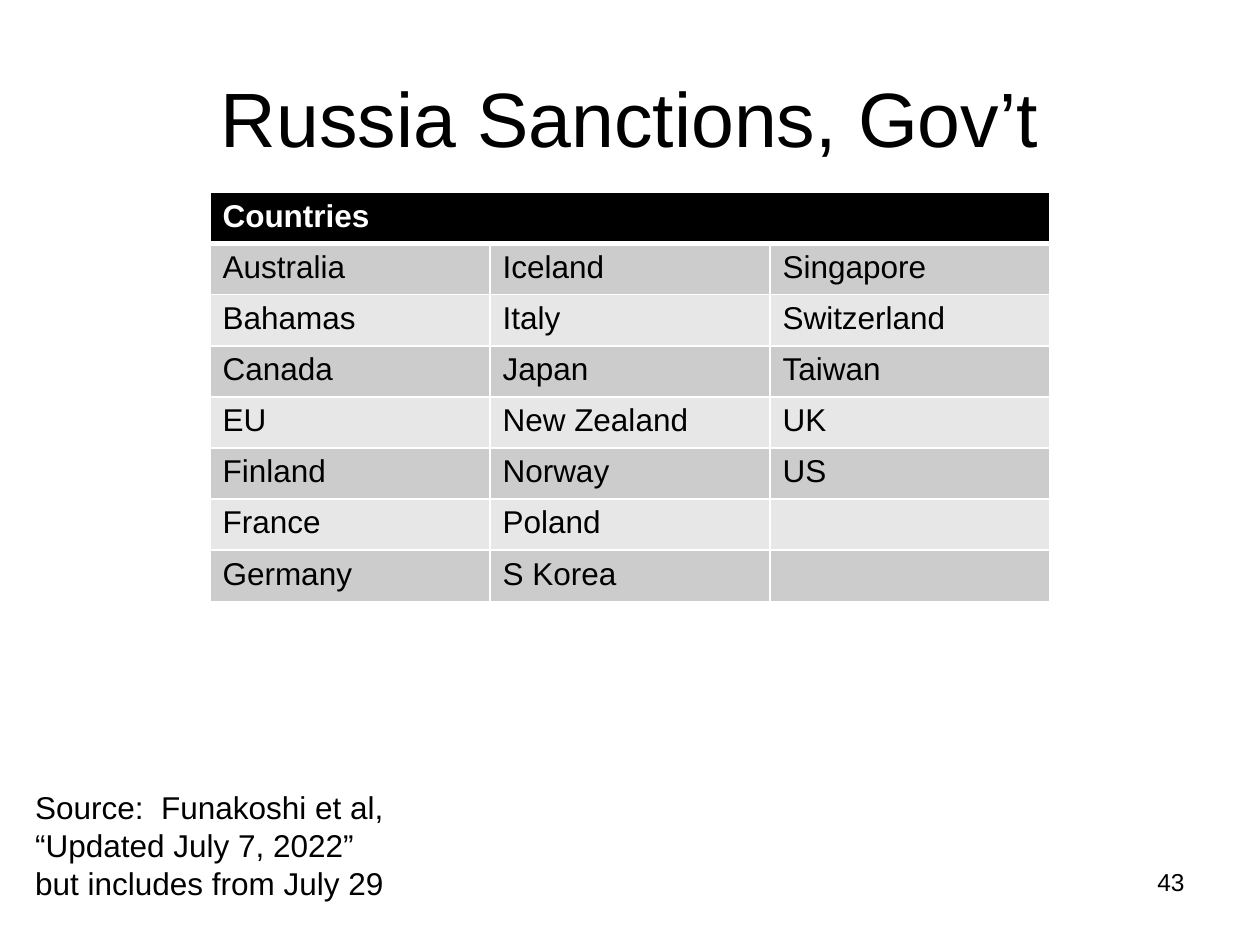
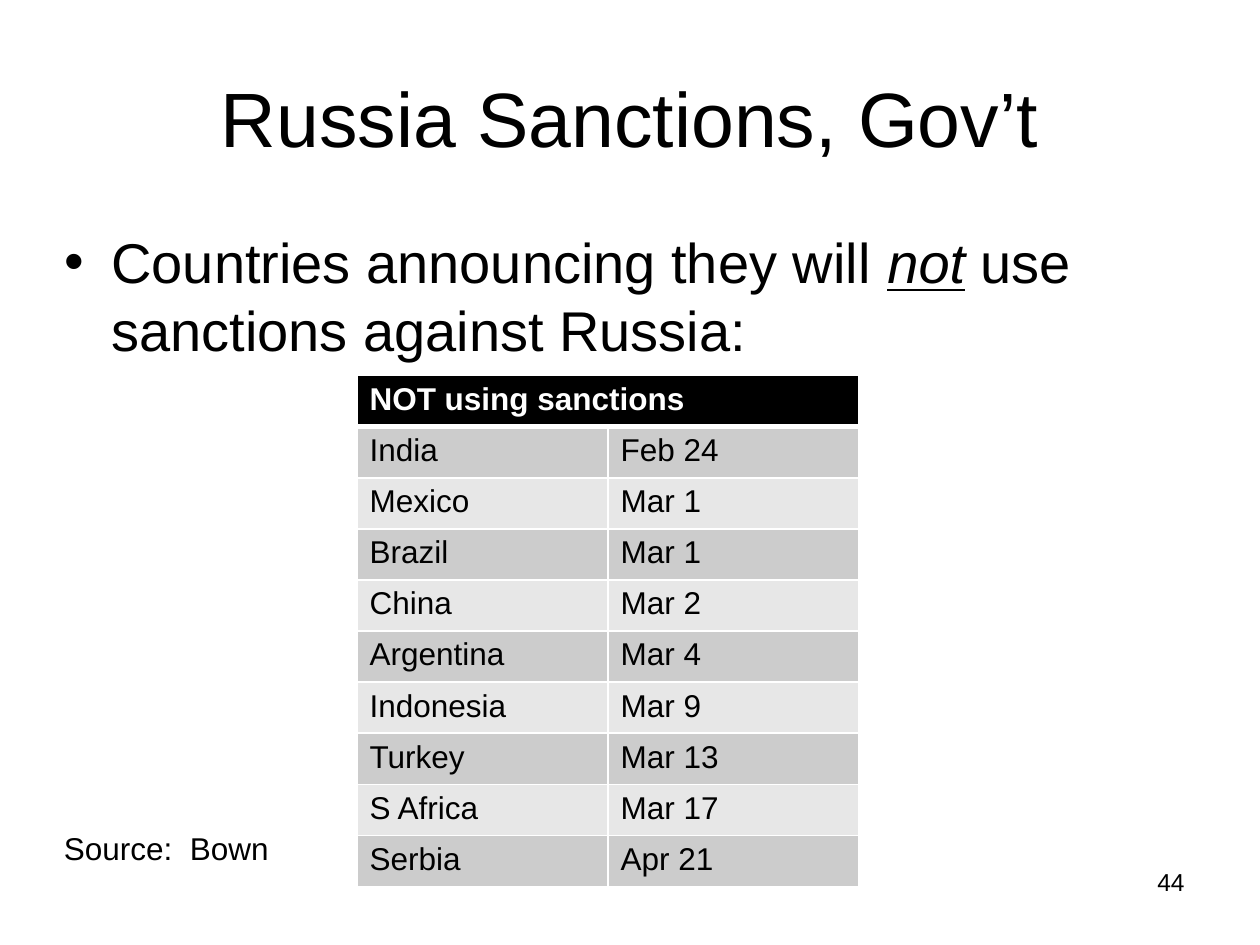
from dataclasses import dataclass

from lxml import etree
from pptx import Presentation
from pptx.dml.color import RGBColor
from pptx.enum.text import MSO_ANCHOR, PP_ALIGN
from pptx.oxml.ns import qn
from pptx.util import Pt

LEFT, CENTER, RIGHT = PP_ALIGN.LEFT, PP_ALIGN.CENTER, PP_ALIGN.RIGHT
TOP, MIDDLE = MSO_ANCHOR.TOP, MSO_ANCHOR.MIDDLE


@dataclass(frozen=True)
class Theme:
    font: str = "Arial"
    ink: str = "000000"
    paper: str = "FFFFFF"
    bands: tuple = ("CCCCCC", "E7E7E7")
    title_size: int = 44
    body_size: int = 32
    small_size: int = 18
    number_size: int = 14
    row_height: float = 29.2
    grid_line: int = 1
    header_rule: int = 3


THEME = Theme()

SANCTIONING = [
    ("Australia", "Iceland", "Singapore"),
    ("Bahamas", "Italy", "Switzerland"),
    ("Canada", "Japan", "Taiwan"),
    ("EU", "New Zealand", "UK"),
    ("Finland", "Norway", "US"),
    ("France", "Poland", ""),
    ("Germany", "S Korea", ""),
]
NOT_SANCTIONING = [
    ("India", "Feb 24"),
    ("Mexico", "Mar 1"),
    ("Brazil", "Mar 1"),
    ("China", "Mar 2"),
    ("Argentina", "Mar 4"),
    ("Indonesia", "Mar 9"),
    ("Turkey", "Mar 13"),
    ("S Africa", "Mar 17"),
    ("Serbia", "Apr 21"),
]


def add_run(paragraph, text, size=THEME.small_size, color=THEME.ink,
            bold=False, italic=False, underline=False):
    run = paragraph.add_run()
    run.text = text
    font = run.font
    font.name, font.size = THEME.font, Pt(size)
    font.color.rgb = RGBColor.from_string(color)
    font.bold, font.italic, font.underline = bold, italic, underline


def add_text(slide, text, left, top, width, height, align=LEFT, anchor=TOP, **style):
    frame = slide.shapes.add_textbox(Pt(left), Pt(top), Pt(width), Pt(height)).text_frame
    frame.word_wrap = True
    frame.vertical_anchor = anchor
    paragraph = frame.paragraphs[0]
    paragraph.alignment = align
    if text:
        add_run(paragraph, text, **style)
    return paragraph


def add_bullet(slide, parts, left, top, width, height, indent=27):
    paragraph = add_text(slide, "", left, top, width, height)
    paragraph.space_before = Pt(THEME.body_size * 0.2)
    properties = paragraph._p.get_or_add_pPr()
    properties.set("marL", str(Pt(indent)))
    properties.set("indent", str(Pt(-indent)))
    etree.SubElement(properties, qn("a:buFont"), typeface=THEME.font)
    etree.SubElement(properties, qn("a:buChar"), char="•")
    for text, style in parts:
        add_run(paragraph, text, size=THEME.body_size, **style)


def set_borders(cell, **widths):
    properties = cell._tc.get_or_add_tcPr()
    for position, side in enumerate("LRTB"):
        line = etree.Element(qn(f"a:ln{side}"), w=str(Pt(widths.get(side, THEME.grid_line))))
        fill = etree.SubElement(line, qn("a:solidFill"))
        etree.SubElement(fill, qn("a:srgbClr"), val=THEME.paper)
        properties.insert(position, line)


def fill_cell(cell, text, fill, **style):
    cell.fill.solid()
    cell.fill.fore_color.rgb = RGBColor.from_string(fill)
    if text:
        add_run(cell.text_frame.paragraphs[0], text, **style)


def add_country_table(slide, heading, rows, left, top, column_width):
    columns = len(rows[0])
    row_count = len(rows) + 1
    table = slide.shapes.add_table(
        row_count, columns, Pt(left), Pt(top),
        Pt(column_width * columns), Pt(THEME.row_height * row_count)).table
    for column in table.columns:
        column.width = Pt(column_width)
    for row in table.rows:
        row.height = Pt(THEME.row_height)
    for c in range(columns):
        fill_cell(table.cell(0, c), "" if c else heading, THEME.ink,
                  color=THEME.paper, bold=True)
        set_borders(table.cell(0, c), B=THEME.header_rule)
    table.cell(0, 0).merge(table.cell(0, columns - 1))
    for r, names in enumerate(rows, start=1):
        for c, name in enumerate(names):
            cell = table.cell(r, c)
            fill_cell(cell, name, THEME.bands[(r - 1) % 2])
            set_borders(cell, T=THEME.header_rule if r == 1 else THEME.grid_line)


def add_sanctions_slide(deck, number):
    slide = deck.slides.add_slide(deck.slide_layouts[6])
    add_text(slide, str(number), 516, 492, 168, 37.5, align=RIGHT, size=THEME.number_size)
    add_text(slide, "Russia Sanctions, Gov’t", 36, 21.6, 648, 90,
             align=CENTER, anchor=MIDDLE, size=THEME.title_size)
    return slide


def main():
    deck = Presentation()
    deck.slide_width, deck.slide_height = Pt(720), Pt(540)

    imposing = add_sanctions_slide(deck, 43)
    add_country_table(imposing, "Countries", SANCTIONING, 120, 110, 160)
    add_text(imposing,
             "Source:  Funakoshi et al, “Updated July 7, 2022” but includes from July 29",
             13, 447, 220, 72.7)

    abstaining = add_sanctions_slide(deck, 44)
    add_bullet(abstaining, [
        ("Countries announcing they will ", {}),
        ("not", {"italic": True, "underline": True}),
        (" use sanctions against Russia:", {}),
    ], 29.5, 126.7, 654.5, 365)
    add_country_table(abstaining, "NOT using sanctions", NOT_SANCTIONING, 204, 214.6, 143.5)
    add_text(abstaining, "Source:  Bown", 29.5, 470, 135.5, 29)

    deck.save("out.pptx")


if __name__ == "__main__":
    main()
